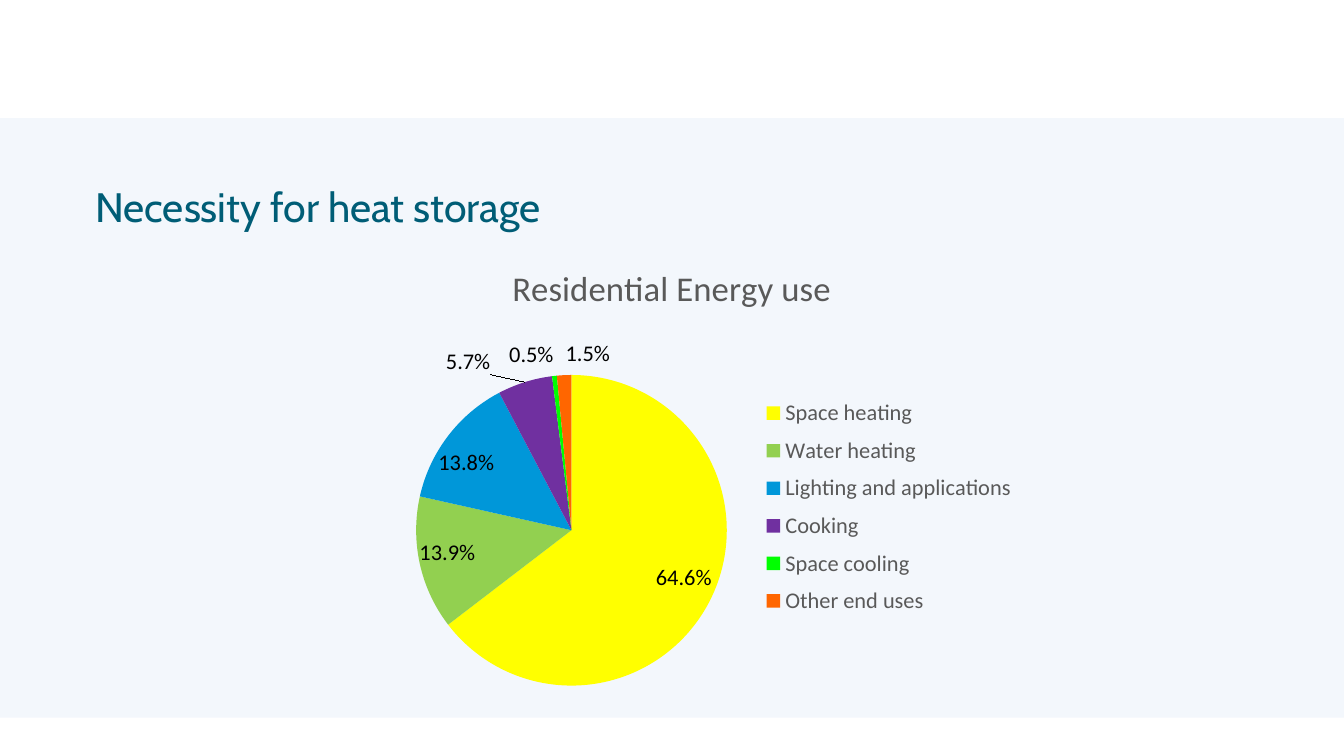
from lxml import etree
from pptx import Presentation
from pptx.chart.data import CategoryChartData
from pptx.dml.color import RGBColor
from pptx.enum import chart as chart_enum, shapes, text
from pptx.oxml.ns import qn
from pptx.util import Inches, Pt

# Content: name, percentage, slice colour, label side, label shift (share of chart)
INSIDE = chart_enum.XL_LABEL_POSITION.INSIDE_END
OUTSIDE = chart_enum.XL_LABEL_POSITION.OUTSIDE_END
TITLE = "Necessity for heat storage"
CHART_TITLE = "Residential Energy use"
ENERGY_USES = [
    ("Space heating", 64.6, "FFFF00", INSIDE, (0.01, -0.01)),
    ("Water heating", 13.9, "92D050", INSIDE, (-0.01, 0.01)),
    ("Lighting and applications", 13.8, "0097D9", INSIDE, (-0.02, 0.02)),
    ("Cooking", 5.7, "7030A0", OUTSIDE, (-0.04, 0)),
    ("Space cooling", 0.5, "00FF00", OUTSIDE, (0, 0)),
    ("Other end uses", 1.5, "FF6600", OUTSIDE, (0.03, 0)),
]
COLORS = {"band": "F3F7FC", "title": "005D76", "muted": "595959", "label": "000000"}
PERCENT_FORMAT = "0.0%"


def format_font(font, size, color, name="Calibri"):
    font.size = Pt(size)
    font.name = name
    font.bold = False
    font.color.rgb = RGBColor.from_string(color)


def add_text(slide, content, box, size, color, font_name):
    shape = slide.shapes.add_textbox(*map(Inches, box))
    frame = shape.text_frame
    frame.word_wrap = True
    frame.vertical_anchor = text.MSO_ANCHOR.MIDDLE
    frame.margin_left = frame.margin_right = frame.margin_top = frame.margin_bottom = 0
    paragraph = frame.paragraphs[0]
    paragraph.line_spacing = Pt(size)
    run = paragraph.add_run()
    run.text = content
    format_font(run.font, size, color, font_name)


def set_layout(parent, after=None, inner=False, **values):
    """Place a chart part by fractions of the chart; without w it is a shift."""
    for old in parent.findall(qn("c:layout")):
        parent.remove(old)
    layout = etree.Element(qn("c:layout"))
    manual = etree.SubElement(layout, qn("c:manualLayout"))
    if inner:
        etree.SubElement(manual, qn("c:layoutTarget")).set("val", "inner")
    if "w" in values:
        for mode in ("xMode", "yMode"):
            etree.SubElement(manual, qn(f"c:{mode}")).set("val", "edge")
    for key, value in values.items():
        etree.SubElement(manual, qn(f"c:{key}")).set("val", str(value))
    if after is None:
        parent.insert(0, layout)
    else:
        parent.find(qn(after)).addnext(layout)
    return layout


presentation = Presentation()
presentation.slide_width = Inches(10)
presentation.slide_height = presentation.slide_width * 9 // 16
slide = presentation.slides.add_slide(presentation.slide_layouts[6])

# Background band and title
band = slide.shapes.add_shape(
    shapes.MSO_SHAPE.RECTANGLE, Inches(0), Inches(0.88), Inches(10), Inches(4.46))
band.shadow.inherit = False
band.fill.solid()
band.fill.fore_color.rgb = RGBColor.from_string(COLORS["band"])
band.line.fill.background()
add_text(slide, TITLE, (0.71, 1.33, 8.59, 0.47), 22, COLORS["title"], "Cabin")

# Pie chart
data = CategoryChartData()
data.categories = [use[0] for use in ENERGY_USES]
data.add_series(CHART_TITLE, [use[1] for use in ENERGY_USES])
chart = slide.shapes.add_chart(
    chart_enum.XL_CHART_TYPE.PIE, Inches(2.01), Inches(1.79),
    Inches(5.98), Inches(3.45), data).chart
format_font(chart.font, 10, COLORS["label"])
chart.has_title = True
chart_title = chart.chart_title.text_frame
chart_title.text = CHART_TITLE
format_font(chart_title.paragraphs[0].runs[0].font, 18.6, COLORS["muted"])

# Legend and plot placement
chart.has_legend = True
legend = chart.legend
legend.position = chart_enum.XL_LEGEND_POSITION.RIGHT
legend.include_in_layout = False
format_font(legend.font, 12, COLORS["muted"])
chart_root = chart.element
set_layout(chart_root.find(".//" + qn("c:legend")), after="c:legendPos",
           x=0.59, y=0.32, w=0.36, h=0.51)
set_layout(chart_root.find(".//" + qn("c:plotArea")), inner=True,
           x=0.18, y=0.29, w=0.39, h=0.67)

# Series-wide percentage labels
plot = chart.plots[0]
plot.vary_by_categories = True
series = plot.series[0]
labels = series.data_labels
labels.show_value = False
labels.show_percentage = True
labels.number_format = PERCENT_FORMAT
labels.number_format_is_linked = False
format_font(labels.font, 12, COLORS["label"])

# Slice colours and label positions
for index, (_, _, color, side, _) in enumerate(ENERGY_USES):
    point = series.points[index]
    point.format.fill.solid()
    point.format.fill.fore_color.rgb = RGBColor.from_string(color)
    point.data_label.position = side
    format_font(point.data_label.font, 12, COLORS["label"])

for element, use in zip(chart_root.iter(qn("c:dLbl")), ENERGY_USES):
    x, y = use[-1]
    element.find(qn("c:showVal")).set("val", "0")
    element.find(qn("c:showPercent")).set("val", "1")
    layout = set_layout(element, after="c:idx", x=x, y=y)
    layout.addnext(etree.Element(
        qn("c:numFmt"), formatCode=PERCENT_FORMAT, sourceLinked="0"))

presentation.save("out.pptx")
